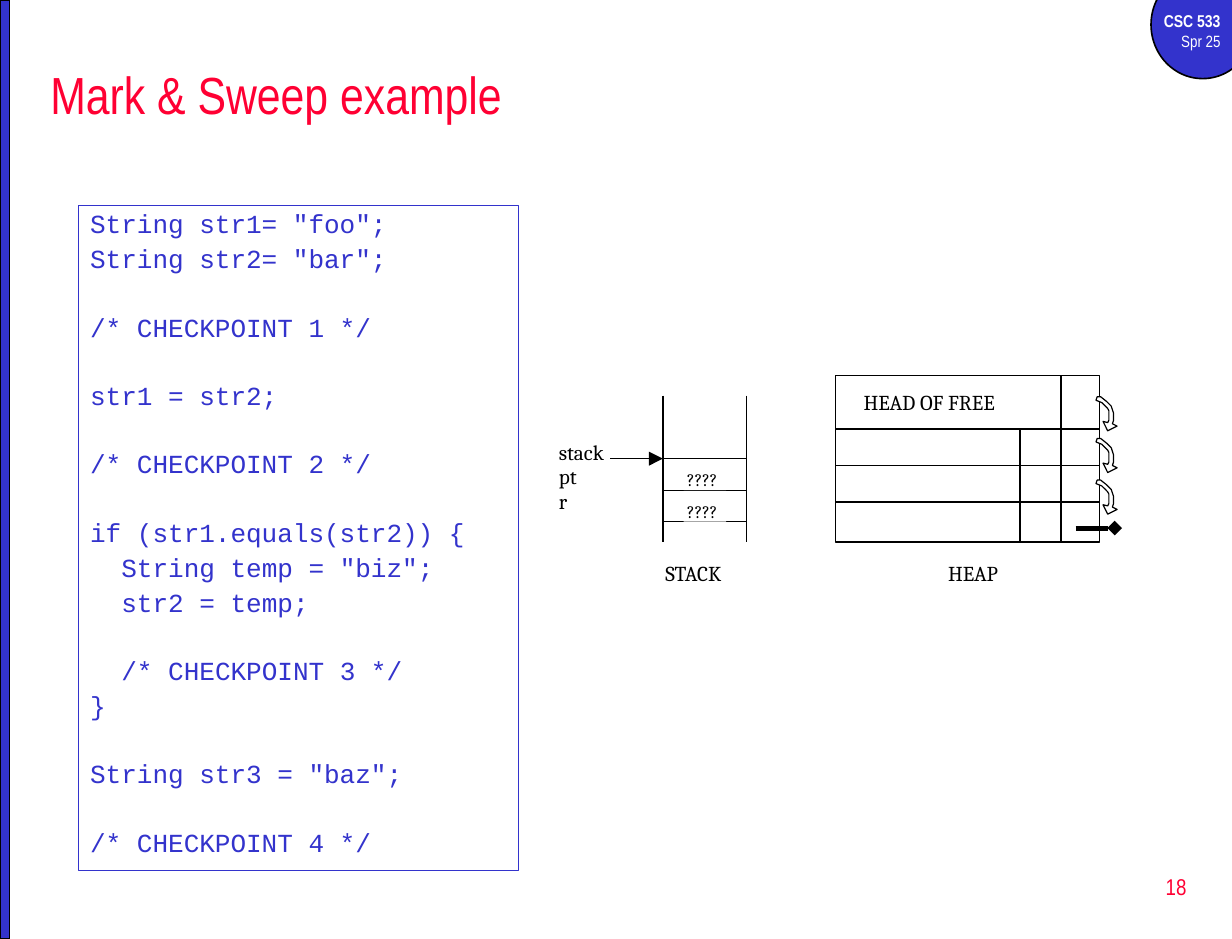
from typing import NamedTuple

from pptx import Presentation
from pptx.dml.color import RGBColor
from pptx.enum.shapes import MSO_CONNECTOR as CONN, MSO_SHAPE as SHAPE
from pptx.enum.text import MSO_ANCHOR as ANCHOR, PP_ALIGN as ALIGN
from pptx.oxml.ns import qn
from pptx.util import Inches, Pt
from lxml.etree import SubElement

COLORS = {"blue": "3333CC", "red": "FF0033", "black": "000000", "white": "FFFFFF"}
NARROW, SERIF, MONO = "Arial Narrow", "Cambria", "Courier New"

# Code blocks are separated by one empty line
CODE = [
    ['String str1= "foo";', 'String str2= "bar";'],
    ["/* CHECKPOINT 1 */"],
    ["str1 = str2;"],
    ["/* CHECKPOINT 2 */"],
    ["if (str1.equals(str2)) {", '  String temp = "biz";', "  str2 = temp;"],
    ["  /* CHECKPOINT 3 */", "}"],
    ['String str3 = "baz";'],
    ["/* CHECKPOINT 4 */"],
]
CODE_SIZE, CODE_GAP, CODE_PITCH = 16, 4.2, 20.5

# Outlines in hundredths of an inch
HOOK = [(10, 22), (11, 20), (11, 12), (10, 10), (8, 8), (5, 5), (0, 3), (1, 0),
        (4, 0), (9, 4), (13, 8), (15, 14), (15, 20), (14, 23), (18, 25),
        (10, 29), (6, 21)]
ARROWHEAD = [(-12, -6), (0, 0), (-12, 6)]


class Box(NamedTuple):
    x: float
    y: float
    w: float
    h: float

    def at(self, fx, fy):
        return self.x + fx * self.w, self.y + fy * self.h

    def sub(self, fx, fy, fw, fh):
        return Box(*self.at(fx, fy), fw * self.w, fh * self.h)


def rgb(name):
    return RGBColor.from_string(COLORS[name])


def paint(sp, fill=None, line=None, width=1):
    sp.shadow.inherit = False
    if fill:
        sp.fill.solid()
        sp.fill.fore_color.rgb = rgb(fill)
    else:
        sp.fill.background()
    if line:
        sp.line.color.rgb = rgb(line)
        sp.line.width = Pt(width)
    else:
        sp.line.fill.background()
    return sp


def add_shape(s, kind, box, **style):
    return paint(s.shapes.add_shape(kind, *map(Inches, box)), **style)


def add_outline(s, points, origin, **style):
    fb = s.shapes.build_freeform(*points[0], scale=Inches(0.01))
    fb.add_line_segments(points[1:], close=True)
    return paint(fb.convert_to_shape(*map(Inches, origin)), **style)


def add_line(s, start, end, width=1, tail=None):
    c = s.shapes.add_connector(CONN.STRAIGHT, *map(Inches, (*start, *end)))
    c.line.color.rgb = rgb("black")
    c.line.width = Pt(width)
    if tail:
        SubElement(c.line._get_or_add_ln(), qn("a:tailEnd"), type=tail)
    SubElement(c._element.spPr, qn("a:effectLst"))


def write(p, text, size=13, font=SERIF, color="black", bold=False, align=ALIGN.LEFT):
    p.alignment = align
    r = p.add_run()
    r.text = text
    r.font.size, r.font.name, r.font.bold = Pt(size), font, bold
    r.font.color.rgb = rgb(color)


def add_text(s, box, text, inset=(0, 0), anchor=ANCHOR.TOP, fill=None, **fmt):
    sp = s.shapes.add_textbox(*map(Inches, box))
    if fill:
        paint(sp, fill)
    tf = sp.text_frame
    tf.word_wrap, tf.vertical_anchor = True, anchor
    tf.margin_left = tf.margin_right = Inches(inset[0])
    tf.margin_top = tf.margin_bottom = Inches(inset[1])
    write(tf.paragraphs[0], text, **fmt)
    return tf


def draw_frame(s, page):
    # Course badge, side bar, title and page number
    inset = (0.1, 0.05)
    add_shape(s, SHAPE.OVAL, Box(9.81, -0.25, 0.88, 0.92), fill="blue", line="black")
    tf = add_text(s, page.sub(0.92, 0.005, 0.08, 0.06), "CSC 533", inset=inset,
                  size=10.5, font=NARROW, color="white", bold=True, align=ALIGN.RIGHT)
    write(tf.add_paragraph(), "Spr 25", size=10, font=NARROW, color="white",
          align=ALIGN.RIGHT)
    add_shape(s, SHAPE.RECTANGLE, Box(0, 0, 0.08, page.h), fill="blue", line="black")
    add_text(s, Box(0.33, 0.42, 9.92, 0.75), "Mark & Sweep example", inset=inset,
             anchor=ANCHOR.MIDDLE, size=32, font=NARROW, color="red")
    add_text(s, Box(8.02, 7.29, 2.19, 0.53), "18", inset=inset,
             anchor=ANCHOR.MIDDLE, size=14, font=NARROW, color="red", align=ALIGN.RIGHT)


def draw_code(s, box):
    sp = add_shape(s, SHAPE.RECTANGLE, box, line="blue", width=0.75)
    tf = sp.text_frame
    tf.word_wrap, tf.vertical_anchor = True, ANCHOR.TOP
    for b, block in enumerate(CODE):
        for i, text in enumerate(block):
            first = b == i == 0
            p = tf.paragraphs[0] if first else tf.add_paragraph()
            p.line_spacing = 0.9
            new_block = b > 0 and i == 0
            p.space_before = Pt(CODE_GAP + (CODE_PITCH if new_block else 0))
            code = text.lstrip()
            indent = len(text) - len(code)
            p._p.get_or_add_pPr().set("marL", str(Pt(0.6 * CODE_SIZE * indent)))
            write(p, code, size=CODE_SIZE, font=MONO, color="blue")


def draw_stack(s, box):
    rows = [0.43 + 0.215 * i for i in range(3)]
    # Walls and cell floors
    for x in (0, 1):
        add_line(s, box.at(x, 0), box.at(x, 1), width=0.75)
    for y in rows:
        add_line(s, box.at(0, y), box.at(1, y), width=0.75)
    # Unknown contents sit on the two lower floors
    for y in rows[1:]:
        add_text(s, box.sub(0.25, y - 0.144, 0.51, 0.144), "????", inset=(0.03, 0),
                 anchor=ANCHOR.BOTTOM, fill="white", size=11)
    # Stack pointer
    add_line(s, box.at(-0.63, rows[0]), box.at(-0.17, rows[0]), width=0.75)
    add_outline(s, ARROWHEAD, box.at(0, rows[0]), fill="black")
    add_text(s, box.sub(-1.25, 0.3, 0.6, 0.18), "stack")
    add_text(s, box.sub(-1.25, 0.46, 0.3, 0.18), "ptr")
    add_text(s, box.sub(0.03, 1.12, 0.85, 0.18), "STACK")


def draw_heap(s, box):
    rows = [0.32 + 0.22 * i for i in range(3)]
    # Table of cells
    add_shape(s, SHAPE.RECTANGLE, box, fill="white", line="black")
    for y in rows:
        add_line(s, box.at(0, y), box.at(1, y))
    for x, top in ((0.855, 0), (0.7, rows[0])):
        add_line(s, box.at(x, top), box.at(x, 1))
    add_text(s, box.sub(0.107, 0.08, 0.6, 0.16), "HEAD OF FREE")
    # Free list links and its end mark
    for i in range(3):
        add_outline(s, HOOK, box.at(0.987, 0.127 + 0.25 * i),
                    fill="white", line="black", width=0.75)
    add_line(s, box.at(0.91, 0.915), box.at(1.058, 0.915), width=3, tail="diamond")
    add_text(s, box.sub(0.427, 1.105, 0.22, 0.16), "HEAP")


def main():
    prs = Presentation()
    page = Box(0, 0, 10.5, 8)
    prs.slide_width, prs.slide_height = Inches(page.w), Inches(page.h)
    s = prs.slides.add_slide(prs.slide_layouts[6])
    draw_frame(s, page)
    draw_code(s, Box(0.67, 1.75, 3.75, 5.67))
    draw_stack(s, Box(5.65, 3.37, 0.71, 1.25))
    draw_heap(s, Box(7.12, 3.2, 2.25, 1.42))
    prs.save("out.pptx")


if __name__ == "__main__":
    main()
